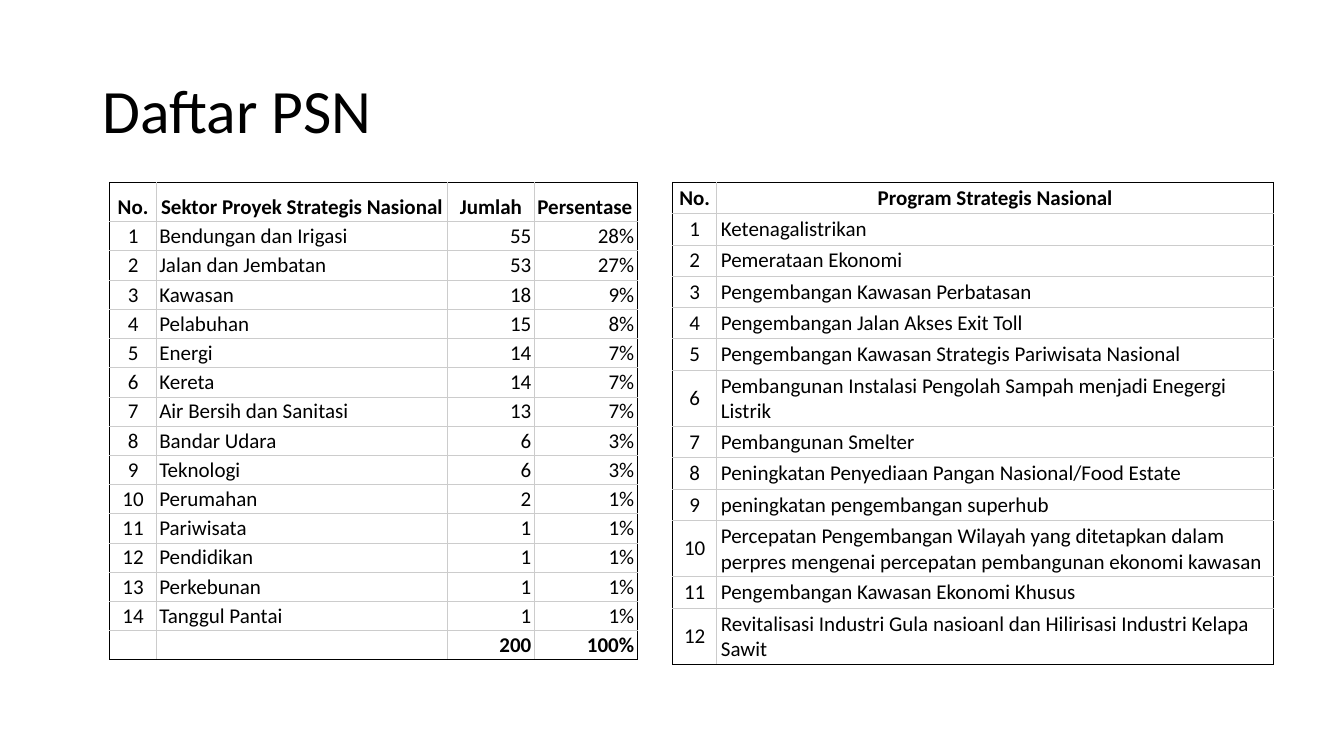
from dataclasses import dataclass

from lxml.etree import SubElement
from pptx import Presentation
from pptx.dml.color import RGBColor
from pptx.enum.text import MSO_ANCHOR as Anchor, PP_ALIGN as Align
from pptx.oxml.ns import qn
from pptx.util import Inches, Pt


@dataclass(frozen=True)
class Theme:
    font: str = "Calibri"
    ink: str = "000000"
    paper: str = "FFFFFF"
    grid: str = "CCCCCC"
    title_size: float = 44
    table_size: float = 15
    border_width: float = 0.75


@dataclass(frozen=True)
class TableBlock:
    left: float
    top: float
    widths: list[float]
    heights: list[float]
    rows: list[tuple[str, ...]]
    header_aligns: list[Align]
    body_aligns: list[Align]
    body_anchor: Anchor
    inset_x: float
    inset_y: float
    bold_rows: set[int]


THEME = Theme()

SECTORS = [
    ("Bendungan dan Irigasi", "55", "28%"),
    ("Jalan dan Jembatan", "53", "27%"),
    ("Kawasan", "18", "9%"),
    ("Pelabuhan", "15", "8%"),
    ("Energi", "14", "7%"),
    ("Kereta", "14", "7%"),
    ("Air Bersih dan Sanitasi", "13", "7%"),
    ("Bandar Udara", "6", "3%"),
    ("Teknologi", "6", "3%"),
    ("Perumahan", "2", "1%"),
    ("Pariwisata", "1", "1%"),
    ("Pendidikan", "1", "1%"),
    ("Perkebunan", "1", "1%"),
    ("Tanggul Pantai", "1", "1%"),
]

PROGRAMS = [
    "Ketenagalistrikan",
    "Pemerataan Ekonomi",
    "Pengembangan Kawasan Perbatasan",
    "Pengembangan Jalan Akses Exit Toll",
    "Pengembangan Kawasan Strategis Pariwisata Nasional",
    "Pembangunan Instalasi Pengolah Sampah menjadi Enegergi Listrik",
    "Pembangunan Smelter",
    "Peningkatan Penyediaan Pangan Nasional/Food Estate",
    "peningkatan pengembangan superhub",
    "Percepatan Pengembangan Wilayah yang ditetapkan dalam perpres "
    "mengenai percepatan pembangunan ekonomi kawasan",
    "Pengembangan Kawasan Ekonomi Khusus",
    "Revitalisasi Industri Gula nasioanl dan Hilirisasi Industri Kelapa Sawit",
]
TWO_LINE_PROGRAMS = {6, 10, 12}

PROGRAM_TABLE = TableBlock(
    left=6.67,
    top=1.81,
    widths=[0.44, 5.52],
    heights=[0.55 if row in TWO_LINE_PROGRAMS else 0.3 for row in range(len(PROGRAMS) + 1)],
    rows=[
        ("No.", "Program Strategis Nasional"),
        *((str(number), name) for number, name in enumerate(PROGRAMS, 1)),
    ],
    header_aligns=[Align.CENTER, Align.CENTER],
    body_aligns=[Align.CENTER, Align.LEFT],
    body_anchor=Anchor.MIDDLE,
    inset_x=0.04,
    inset_y=0.03,
    bold_rows={0},
)

SECTOR_TABLE = TableBlock(
    left=1.09,
    top=1.81,
    widths=[0.46, 2.89, 0.86, 1.02],
    heights=[0.39] + [0.29] * (len(SECTORS) + 1),
    rows=[
        ("No.", "Sektor Proyek Strategis Nasional", "Jumlah", "Persentase"),
        *((str(number), *sector) for number, sector in enumerate(SECTORS, 1)),
        ("", "", "200", "100%"),
    ],
    header_aligns=[Align.CENTER, Align.CENTER, Align.CENTER, Align.LEFT],
    body_aligns=[Align.CENTER, Align.LEFT, Align.RIGHT, Align.RIGHT],
    body_anchor=Anchor.BOTTOM,
    inset_x=0.03,
    inset_y=0.02,
    bold_rows={0, len(SECTORS) + 1},
)


def style_text(para, size: float, bold: bool = False) -> None:
    for span in para.runs:
        span.font.name = THEME.font
        span.font.size = Pt(size)
        span.font.bold = bold
        span.font.color.rgb = RGBColor.from_string(THEME.ink)
    if not para.runs:
        SubElement(para._p, qn("a:endParaRPr"), sz=str(int(size * 100)))


def draw_borders(cell, outer_edges: dict[str, bool]) -> None:
    properties = cell._tc.get_or_add_tcPr()
    for edge, is_outer in outer_edges.items():
        line = SubElement(properties, qn(f"a:ln{edge}"), w=str(Pt(THEME.border_width)))
        fill = SubElement(line, qn("a:solidFill"))
        SubElement(fill, qn("a:srgbClr"), val=THEME.ink if is_outer else THEME.grid)


def draw_title(page, text: str) -> None:
    box = page.shapes.add_textbox(Inches(0.92), Inches(0.4), Inches(11.5), Inches(1.45))
    frame = box.text_frame
    frame.word_wrap = True
    frame.vertical_anchor = Anchor.MIDDLE
    frame.text = text
    para = frame.paragraphs[0]
    para.line_spacing = 0.9
    style_text(para, THEME.title_size)


def draw_table(page, block: TableBlock) -> None:
    last_row, last_column = len(block.rows) - 1, len(block.widths) - 1
    table = page.shapes.add_table(
        len(block.rows), len(block.widths),
        Inches(block.left), Inches(block.top),
        Inches(sum(block.widths)), Inches(sum(block.heights)),
    ).table
    table.first_row = table.horz_banding = False
    for column, width in zip(table.columns, block.widths):
        column.width = Inches(width)
    for row, height in zip(table.rows, block.heights):
        row.height = Inches(height)

    for row_index, values in enumerate(block.rows):
        is_header = row_index == 0
        aligns = block.header_aligns if is_header else block.body_aligns
        for column_index, value in enumerate(values):
            cell = table.cell(row_index, column_index)
            cell.margin_left = cell.margin_right = Inches(block.inset_x)
            cell.margin_top = cell.margin_bottom = Inches(block.inset_y)
            cell.vertical_anchor = Anchor.BOTTOM if is_header else block.body_anchor
            draw_borders(cell, {
                "L": column_index == 0,
                "R": column_index == last_column,
                "T": is_header,
                "B": row_index == last_row,
            })
            cell.fill.solid()
            cell.fill.fore_color.rgb = RGBColor.from_string(THEME.paper)
            cell.text_frame.text = value
            para = cell.text_frame.paragraphs[0]
            para.alignment = aligns[column_index]
            style_text(para, THEME.table_size, row_index in block.bold_rows)


def main() -> None:
    deck = Presentation()
    deck.slide_width, deck.slide_height = Inches(13.33), Inches(7.5)
    page = deck.slides.add_slide(deck.slide_layouts[6])
    draw_title(page, "Daftar PSN")
    for block in (PROGRAM_TABLE, SECTOR_TABLE):
        draw_table(page, block)
    deck.save("out.pptx")


if __name__ == "__main__":
    main()
